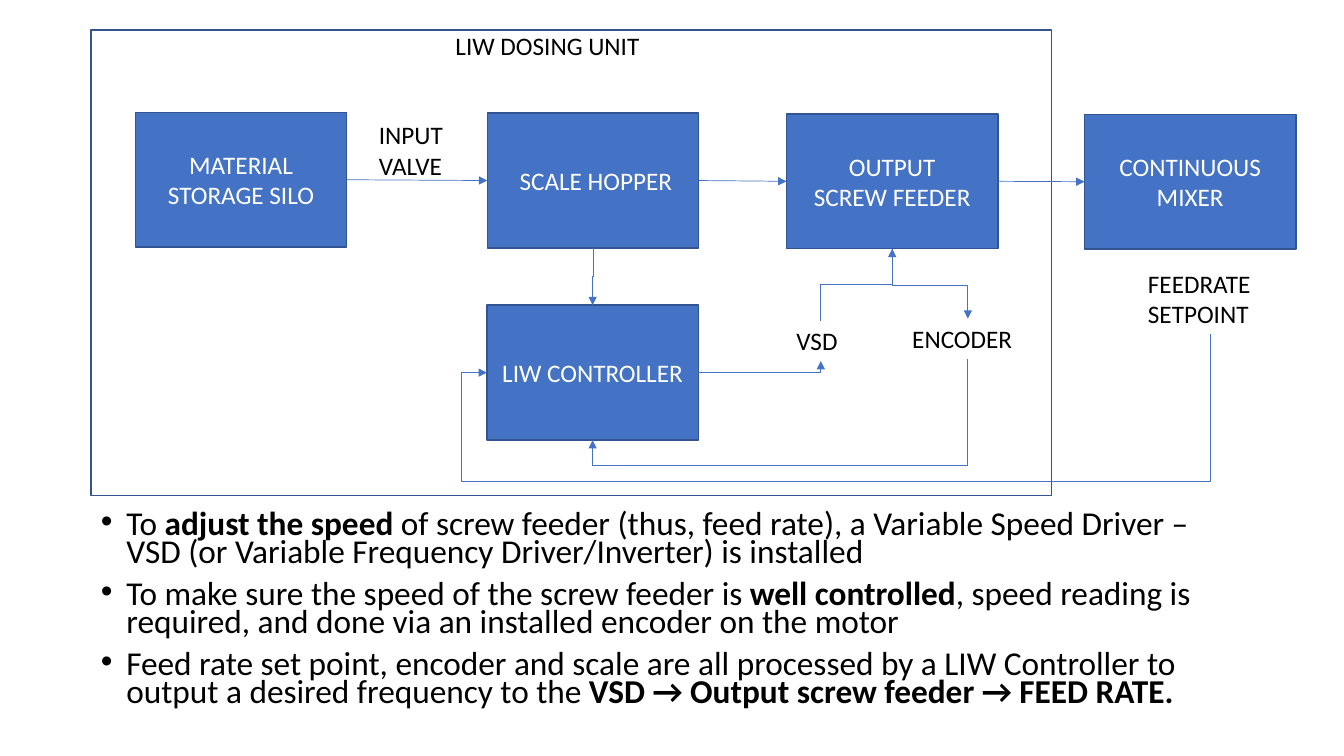
from pptx import Presentation
from pptx import util as u
from pptx.dml.color import RGBColor
from pptx.enum import shapes, text
from pptx.oxml import parse_xml
from pptx.oxml.ns import nsdecls, qn

BLUE = RGBColor(0x44, 0x72, 0xC4)
EDGE = RGBColor(0x32, 0x54, 0x91)
WHITE = RGBColor(0xFF, 0xFF, 0xFF)
BLACK = RGBColor(0, 0, 0)
FONT = "Calibri"
TOP, LEFT, BOTTOM, RIGHT = range(4)  # connection sites of a rectangle
BOX_W, BOX_H = 5.33, 3.4

POINTS = [
    [("To ", False), ("adjust the speed ", True),
     ("of screw feeder (thus, feed rate), a Variable Speed Driver – VSD "
      "(or Variable Frequency Driver/Inverter) is installed", False)],
    [("To make sure the speed of the screw feeder is ", False),
     ("well controlled", True),
     (", speed reading is required, and done via an installed encoder "
      "on the motor", False)],
    [("Feed rate set point, encoder and scale are all processed by a LIW "
      "Controller to output a desired frequency to the ", False),
     ("VSD → Output screw feeder → FEED RATE.", True)],
]


def add_run(para, words, size, color, bold=False):
    run = para.add_run()
    run.text = words
    font = run.font
    font.name, font.size, font.bold = FONT, u.Pt(size), bold
    font.color.rgb = color


def fill_text(frame, lines, color, align):
    frame.word_wrap = True
    for i, line in enumerate(lines):
        para = frame.add_paragraph() if i else frame.paragraphs[0]
        para.alignment = align
        add_run(para, line, 18, color)


def add_rect(slide, x, y, w, h):
    rect = slide.shapes.add_shape(
        shapes.MSO_SHAPE.RECTANGLE, u.Cm(x), u.Cm(y), u.Cm(w), u.Cm(h))
    rect.shadow.inherit = False
    rect.fill.background()
    rect.line.color.rgb = EDGE
    rect.line.width = u.Pt(1)
    return rect


def add_unit(slide, x, y, *lines):
    """Add a solid blue block of the diagram."""
    unit = add_rect(slide, x, y, BOX_W, BOX_H)
    unit.fill.solid()
    unit.fill.fore_color.rgb = BLUE
    unit.text_frame.vertical_anchor = text.MSO_ANCHOR.MIDDLE
    fill_text(unit.text_frame, lines, WHITE, text.PP_ALIGN.CENTER)
    return unit


def add_label(slide, x, y, w, h, *lines):
    label = slide.shapes.add_textbox(u.Cm(x), u.Cm(y), u.Cm(w), u.Cm(h))
    fill_text(label.text_frame, lines, BLACK, text.PP_ALIGN.LEFT)
    label.text_frame.auto_size = text.MSO_AUTO_SIZE.SHAPE_TO_FIT_TEXT
    return label


def turn(link):
    """Rotate a connector by 90 degrees while its ends stay in place."""
    x1, y1, x2, y2 = link.begin_x, link.begin_y, link.end_x, link.end_y
    mid_x, mid_y = (x1 + x2) // 2, (y1 + y2) // 2
    half_x, half_y = (x2 - x1) // 2, (y2 - y1) // 2
    link.begin_x, link.begin_y = mid_x - half_y, mid_y + half_x
    link.end_x, link.end_y = mid_x + half_y, mid_y - half_x
    link.element.spPr.find(qn("a:xfrm")).set("rot", "5400000")


def add_link(slide, start, site, end, goal, bends=0, adjust=()):
    """Join two sites with an arrow; bends is the bentConnector number."""
    kind = shapes.MSO_CONNECTOR.ELBOW if bends else shapes.MSO_CONNECTOR.STRAIGHT
    link = slide.shapes.add_connector(kind, 0, 0, 0, 0)
    link.begin_connect(start, site)
    link.end_connect(end, goal)
    link.line.color.rgb = BLUE
    link.line.width = u.Pt(0.5)
    link.line._get_or_add_ln().append(
        parse_xml(f'<a:tailEnd {nsdecls("a")} type="triangle"/>'))
    props = link.element.spPr
    props.append(parse_xml(f'<a:effectLst {nsdecls("a")}/>'))
    if bends:
        guides = "".join(f'<a:gd name="adj{i}" fmla="val {value}"/>'
                         for i, value in enumerate(adjust, 1))
        props.replace(props.find(qn("a:prstGeom")), parse_xml(
            f'<a:prstGeom {nsdecls("a")} prst="bentConnector{bends}">'
            f'<a:avLst>{guides}</a:avLst></a:prstGeom>'))
        if site in (TOP, BOTTOM):
            turn(link)


def draw_flow(slide, x, y, w, h):
    """Draw the dosing unit in its frame, with the mixer to the right."""
    add_rect(slide, x, y, w, h)
    add_label(slide, x + 8.94, y - 0.12, 6.02, 1.03, "LIW DOSING UNIT")
    row = y + 2.09
    silo = add_unit(slide, x + 1.12, row - 0.02, "MATERIAL STORAGE SILO")
    hopper = add_unit(slide, x + 9.99, row, " SCALE HOPPER")
    feeder = add_unit(slide, x + 17.53, row + 0.02, "OUTPUT", "SCREW FEEDER")
    mixer = add_unit(slide, x + 25.04, row + 0.03, "CONTINUOUS MIXER")
    control = add_unit(slide, x + 9.98, row + 4.84, "LIW CONTROLLER")
    add_label(slide, x + 7.01, row + 0.04, 2.92, 1.8, "INPUT", "VALVE")
    drive = add_label(slide, x + 17.53, y + 7.32, 1.73, 1.02, "VSD")
    coder = add_label(slide, x + 20.45, y + 7.27, 3.3, 1.02, "ENCODER")
    rate = add_label(slide, x + 26.39, y + 5.87, 3.63, 1.79, "FEEDRATE SETPOINT")

    for start, end in ((silo, hopper), (hopper, feeder), (feeder, mixer)):
        add_link(slide, start, RIGHT, end, LEFT)
    add_link(slide, hopper, BOTTOM, control, TOP, 3)
    add_link(slide, control, RIGHT, drive, BOTTOM, 2)
    add_link(slide, drive, TOP, feeder, BOTTOM, 3)
    add_link(slide, feeder, BOTTOM, coder, TOP, 3, [52400])
    add_link(slide, coder, BOTTOM, control, BOTTOM, 3, [131200])
    add_link(slide, rate, BOTTOM, control, LEFT, 4, [382100, 103500])


def write_points(body, x, y, w, h):
    body.left, body.top, body.width, body.height = map(u.Cm, (x, y, w, h))
    frame = body.text_frame
    frame.word_wrap = True
    frame.auto_size = text.MSO_AUTO_SIZE.NONE
    frame.vertical_anchor = text.MSO_ANCHOR.TOP
    for i, point in enumerate(POINTS):
        para = frame.add_paragraph() if i else frame.paragraphs[0]
        para.alignment = text.PP_ALIGN.LEFT
        para.line_spacing = 0.7
        para.space_before = u.Pt(10)
        props = para._p.get_or_add_pPr()
        props.set("marL", str(u.Cm(0.64)))
        props.set("indent", str(-u.Cm(0.64)))
        props.append(parse_xml(f'<a:buFont {nsdecls("a")} typeface="Arial"/>'))
        props.append(parse_xml(f'<a:buChar {nsdecls("a")} char="•"/>'))
        for words, bold in point:
            add_run(para, words, 23.8, BLACK, bold)


def main():
    deck = Presentation()
    deck.slide_width, deck.slide_height = u.Cm(33.87), u.Cm(19.05)
    slide = deck.slides.add_slide(deck.slide_layouts[1])
    title = slide.shapes.title.element
    title.getparent().remove(title)
    draw_flow(slide, 2.29, 0.76, 24.21, 11.73)
    write_points(slide.placeholders[1], 2.29, 12.8, 29.21, 5.61)
    deck.save("out.pptx")


if __name__ == "__main__":
    main()
